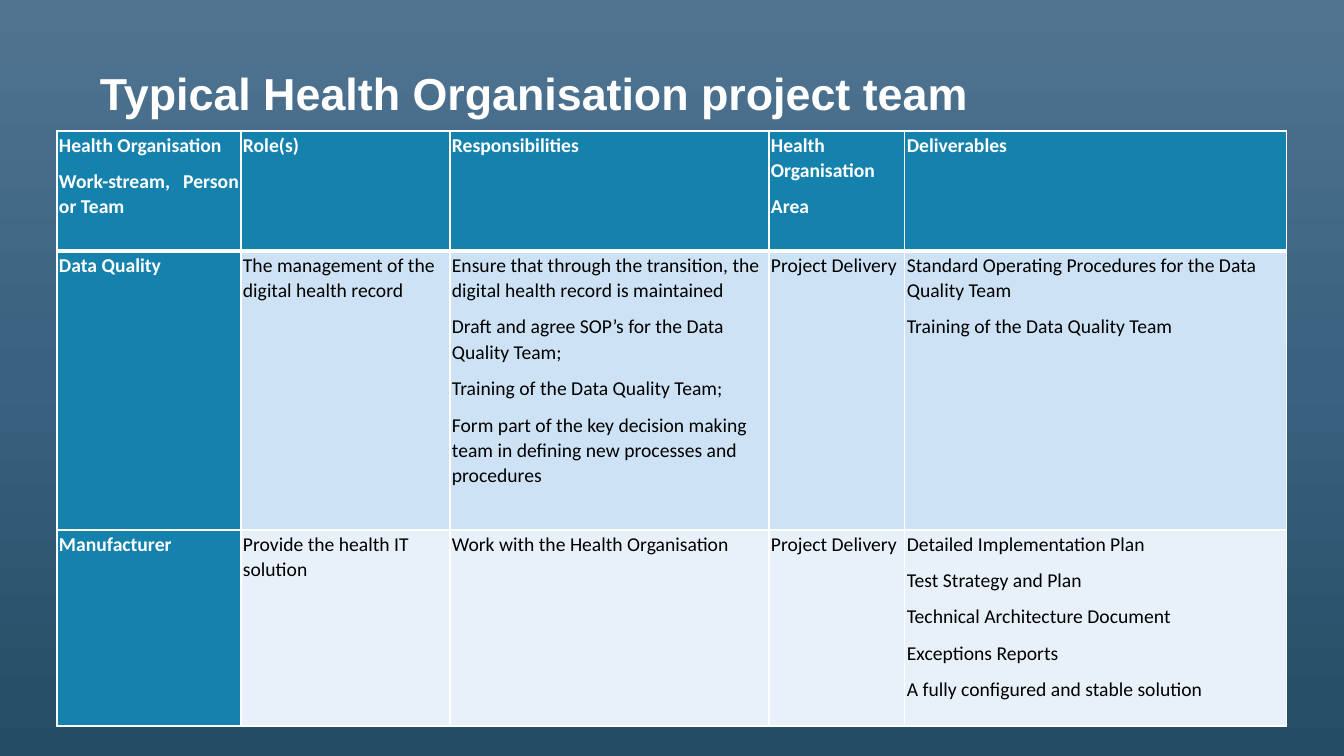
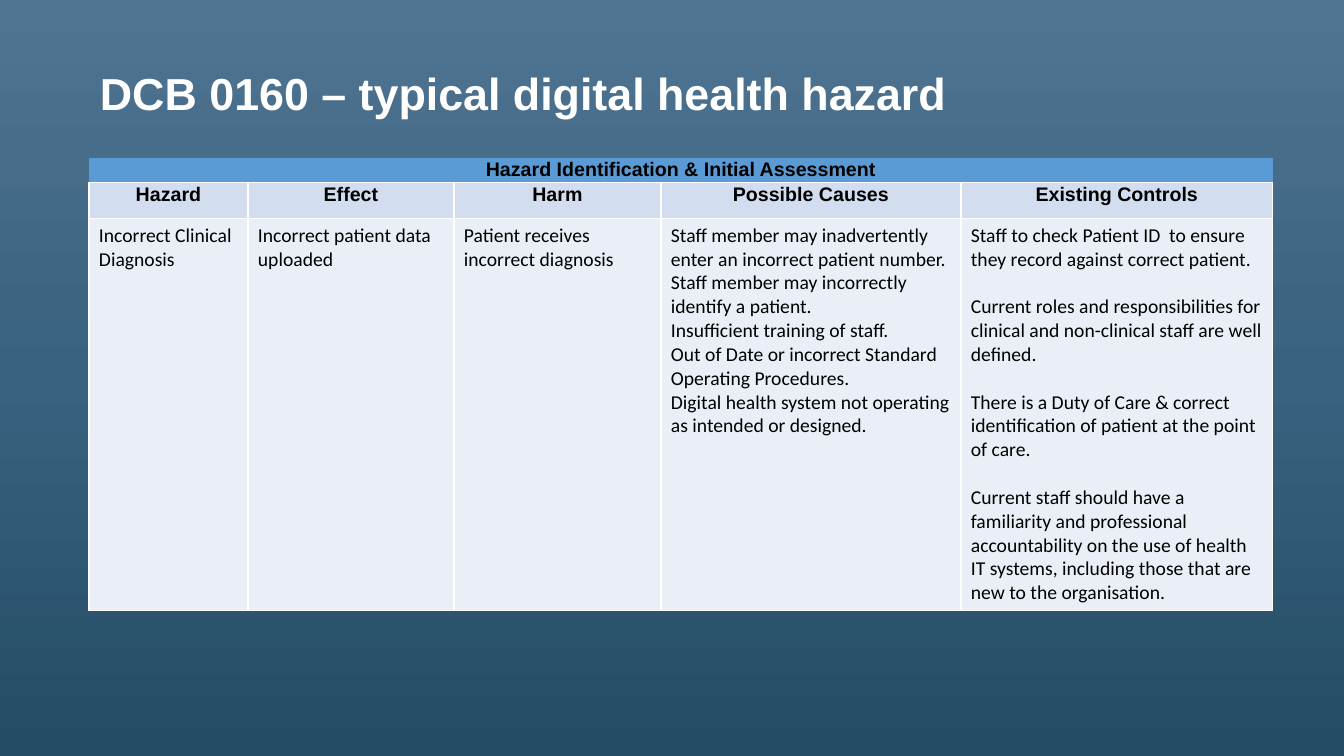
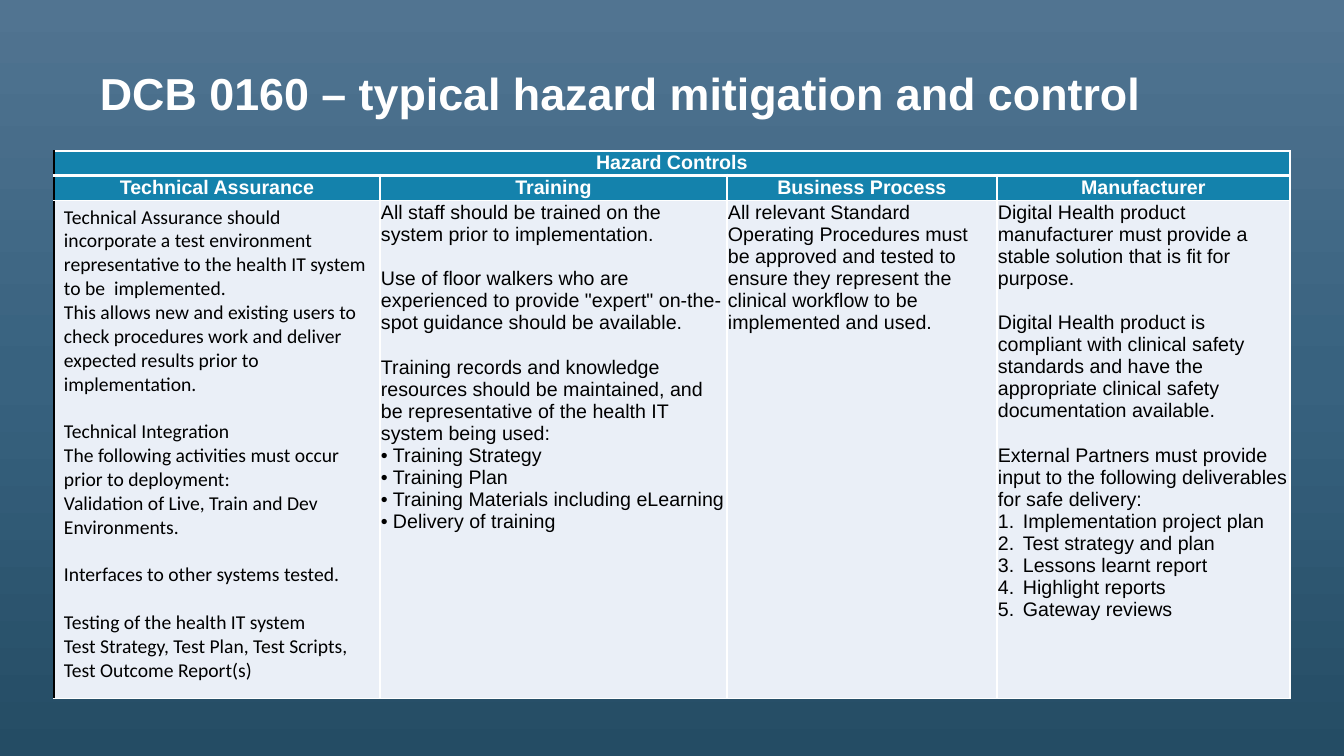
"""Build three slides on health project roles and clinical hazards."""
from copy import deepcopy
from dataclasses import dataclass, field
from typing import NamedTuple

from lxml import etree
from pptx import Presentation
from pptx.dml.color import RGBColor
from pptx.enum.text import MSO_ANCHOR, PP_ALIGN
from pptx.oxml.ns import qn
from pptx.util import Emu, Pt

LEFT, MID, FULL = PP_ALIGN.LEFT, PP_ALIGN.CENTER, PP_ALIGN.JUSTIFY
MIDDLE = MSO_ANCHOR.MIDDLE
PX = 914400 / 100.8
WIDE, HIGH = 1344, 756

WHITE = RGBColor(0xFF, 0xFF, 0xFF)
BLACK = RGBColor(0x00, 0x00, 0x00)
TEAL = RGBColor(0x14, 0x82, 0xAC)
SKY = RGBColor(0xCD, 0xE3, 0xF5)
ICE = RGBColor(0xE8, 0xF1, 0xFA)
BLUE = RGBColor(0x5B, 0x9B, 0xD5)
MIST = RGBColor(0xD2, 0xDE, 0xEF)
PALE = RGBColor(0xEA, 0xEF, 0xF7)
FADE = (
    (0.0, RGBColor(0x51, 0x74, 0x91)),
    (0.5, RGBColor(0x38, 0x62, 0x7F)),
    (1.0, RGBColor(0x24, 0x4C, 0x64)),
)

ROOMY, SNUG, TIGHT, SLIM = (10, 5, 10, 5), (2, 1, 2, 0), (1, 1, 1, 0), (1, 1, 12, 0)
SIDES = ("left", "top", "right", "bottom")
MARKS = {
    "dot": (12, "buChar", {"char": "•"}),
    "num": (25, "buAutoNum", {"type": "arabicPeriod"}),
}


class Para(NamedTuple):
    """A paragraph with a gap above it in points and a list mark."""
    text: str
    gap: int = 0
    mark: str = ""


class Look(NamedTuple):
    """The format of a cell."""
    fill: RGBColor
    ink: RGBColor = BLACK
    font: str = "Calibri"
    bold: bool = False
    inset: tuple[int, int, int, int] = ROOMY
    align: PP_ALIGN = LEFT
    line: float = 1.0
    after: int = 0


Text = str | tuple[str | Para, ...]


@dataclass(frozen=True)
class Row:
    """A table row with looks for special columns and rule widths in points."""
    high: int
    look: Look
    cells: tuple[Text, ...]
    looks: dict[int, Look] = field(default_factory=dict)
    top: int = 1
    side: int = 1
    base: int = 1


@dataclass(frozen=True)
class Page:
    """A title with a table."""
    title: str
    left: int
    top: int
    cols: tuple[int, ...]
    rows: tuple[Row, ...]
    edge: RGBColor = WHITE


TEAM_SIDE = Look(TEAL, WHITE, bold=True, inset=SNUG, line=1.06, after=8)
TEAM_HEAD = TEAM_SIDE._replace(align=FULL)
TEAM_SKY = Look(SKY, inset=SNUG, line=1.06, after=8)
TEAM_ICE = TEAM_SKY._replace(fill=ICE)
BAND = Look(BLUE, BLACK, "Arial", True, TIGHT, MID)
LABEL = BAND._replace(fill=MIST)
CARE_HEAD = BAND._replace(fill=TEAL, ink=WHITE)
BODY = Look(PALE)
CARE_BODY = BODY._replace(font="Arial", inset=TIGHT)
CARE_SLIM = CARE_BODY._replace(inset=SLIM)

PAGES = (
    Page("Typical Health Organisation project team", 57, 131, (184, 209, 319, 136, 382), (
        Row(120, TEAM_HEAD, (
            ("Health Organisation", "Work-stream, Person or Team"),
            "Role(s)",
            "Responsibilities",
            ("Health Organisation", "Area"),
            "Deliverables",
        ), base=3),
        Row(279, TEAM_SKY, (
            "Data Quality",
            "The management of the digital health record",
            (
                "Ensure that through the transition, the digital health record is maintained",
                "Draft and agree SOP’s for the Data Quality Team;",
                "Training of the Data Quality Team;",
                "Form part of the key decision making team in defining new processes and procedures",
            ),
            "Project Delivery",
            (
                "Standard Operating Procedures for the Data Quality Team",
                "Training of the Data Quality Team",
            ),
        ), {0: TEAM_SIDE}, top=3),
        Row(196, TEAM_ICE, (
            "Manufacturer",
            "Provide the health IT solution",
            "Work with the Health Organisation",
            "Project Delivery",
            (
                "Detailed Implementation Plan",
                "Test Strategy and Plan",
                "Technical Architecture Document",
                "Exceptions Reports",
                "A fully configured and stable solution",
            ),
        ), {0: TEAM_SIDE}),
    )),
    Page("DCB 0160 – typical digital health hazard", 89, 158, (159, 206, 207, 300, 312), (
        Row(24, BAND, ("Hazard Identification & Initial Assessment",), top=0, side=0),
        Row(36, LABEL, ("Hazard", "Effect", "Harm", "Possible Causes", "Existing Controls")),
        Row(392, BODY, (
            "Incorrect Clinical Diagnosis",
            "Incorrect patient data uploaded",
            "Patient receives incorrect diagnosis",
            (
                "Staff member may inadvertently enter an incorrect patient number.",
                "Staff member may incorrectly identify a patient.",
                "Insufficient training of staff.",
                "Out of Date or incorrect Standard Operating Procedures.",
                "Digital health system not operating as intended or designed.",
            ),
            (
                "Staff to check Patient ID  to ensure they record against correct patient.",
                Para("Current roles and responsibilities for clinical and non-clinical staff "
                     "are well defined.", 17),
                Para("There is a Duty of Care & correct identification of patient at the "
                     "point of care.", 17),
                Para("Current staff should have a familiarity and professional accountability "
                     "on the use of health IT systems, including those that are new to the "
                     "organisation.", 17),
            ),
        )),
    )),
    Page("DCB 0160 – typical hazard mitigation and control", 54, 151, (326, 347, 270, 293), (
        Row(24, CARE_HEAD, ("Hazard Controls",), base=3),
        Row(25, CARE_HEAD, (
            "Technical Assurance", "Training", "Business Process", "Manufacturer",
        ), top=3),
        Row(498, CARE_BODY, (
            (
                "Technical Assurance should incorporate a test environment representative "
                "to the health IT system to be  implemented.",
                "This allows new and existing users to check procedures work and deliver "
                "expected results prior to implementation.",
                Para("Technical Integration", 17),
                "The following activities must occur prior to deployment:",
                "Validation of Live, Train and Dev Environments.",
                Para("Interfaces to other systems tested.", 17),
                Para("Testing of the health IT system", 17),
                "Test Strategy, Test Plan, Test Scripts, Test Outcome Report(s)",
            ),
            (
                "All staff should be trained on the system prior to implementation.",
                Para("Use of floor walkers who are experienced to provide \"expert\" "
                     "on-the-spot guidance should be available.", 16),
                Para("Training records and knowledge resources should be maintained, and be "
                     "representative of the health IT system being used:", 16),
                Para("Training Strategy", mark="dot"),
                Para("Training Plan", mark="dot"),
                Para("Training Materials including eLearning", mark="dot"),
                Para("Delivery of training", mark="dot"),
            ),
            "All relevant Standard Operating Procedures must be approved and tested to "
            "ensure they represent the clinical workflow to be implemented and used.",
            (
                "Digital Health product manufacturer must provide a stable solution that "
                "is fit for purpose.",
                Para("Digital Health product is compliant with clinical safety standards and "
                     "have the appropriate clinical safety documentation available.", 16),
                Para("External Partners must provide input to the following deliverables "
                     "for safe delivery:", 16),
                Para("Implementation project plan", mark="num"),
                Para("Test strategy and plan", mark="num"),
                Para("Lessons learnt report", mark="num"),
                Para("Highlight reports", mark="num"),
                Para("Gateway reviews", mark="num"),
            ),
        ), {0: BODY, 2: CARE_SLIM}),
    ), BLACK),
)


def px(size: int) -> Emu:
    """Turn pixels into EMU."""
    return Emu(round(size * PX))


def apply(item, values: dict) -> None:
    """Set each named attribute."""
    for name, value in values.items():
        setattr(item, name, value)


def write(para, text: str, size: int, look: Look, gap: int = 0) -> None:
    """Fill a paragraph with one run in the given look."""
    apply(para, {
        "alignment": look.align, "line_spacing": look.line,
        "space_before": Pt(gap), "space_after": Pt(look.after),
    })
    run = para.add_run()
    run.text = text
    apply(run.font, {"name": look.font, "size": Pt(size), "bold": look.bold})
    run.font.color.rgb = look.ink


def mark_list(para, mark: str) -> None:
    """Give a paragraph a hanging list mark."""
    hang, tag, values = MARKS[mark]
    props = para._p.get_or_add_pPr()
    props.set("marL", str(px(hang)))
    props.set("indent", str(-px(hang)))
    etree.SubElement(props, qn("a:buFont"), typeface="Arial")
    etree.SubElement(props, qn(f"a:{tag}"), **values)


def rule(cell, edges: dict[str, tuple[int, RGBColor]]) -> None:
    """Draw the sides of a cell, with none where the width is zero."""
    props = cell._tc.get_or_add_tcPr()
    for spot, (side, (width, color)) in enumerate(edges.items()):
        line = etree.Element(qn(f"a:ln{side}"), w=str(Pt(width)))
        if width:
            fill = etree.SubElement(line, qn("a:solidFill"))
            etree.SubElement(fill, qn("a:srgbClr"), val=str(color))
        else:
            etree.SubElement(line, qn("a:noFill"))
        props.insert(spot, line)


def fill_cell(cell, look: Look, text: Text) -> None:
    """Colour a cell and write its paragraphs."""
    cell.fill.solid()
    cell.fill.fore_color.rgb = look.fill
    apply(cell, {f"margin_{side}": px(gap) for side, gap in zip(SIDES, look.inset)})
    frame = cell.text_frame
    for i, part in enumerate((text,) if isinstance(text, str) else text):
        item = Para(part) if isinstance(part, str) else part
        para = frame.add_paragraph() if i else frame.paragraphs[0]
        write(para, item.text, 14, look, item.gap)
        if item.mark:
            mark_list(para, item.mark)


def add_title(slide, text: str) -> None:
    """Add the slide title."""
    frame = slide.shapes.add_textbox(px(90), px(64), px(1183), px(64)).text_frame
    apply(frame, {"word_wrap": True, "vertical_anchor": MIDDLE})
    write(frame.paragraphs[0], text, 32, Look(TEAL, WHITE, "Arial", True, line=0.9))


def add_grid(slide, page: Page) -> None:
    """Add the table of a page."""
    count = len(page.cols)
    table = slide.shapes.add_table(
        len(page.rows), count, px(page.left), px(page.top),
        px(sum(page.cols)), px(sum(row.high for row in page.rows)),
    ).table
    apply(table, {"first_row": False, "horz_banding": False})
    for col, wide in zip(table.columns, page.cols):
        col.width = px(wide)
    for r, row in enumerate(page.rows):
        table.rows[r].height = px(row.high)
        for c in range(count):
            cell = table.cell(r, c)
            if c < len(row.cells):
                fill_cell(cell, row.looks.get(c, row.look), row.cells[c])
            rule(cell, {
                "L": (row.side, WHITE if c else page.edge),
                "R": (row.side, WHITE),
                "T": (row.top, WHITE),
                "B": (row.base, WHITE),
            })
        if len(row.cells) == 1:
            table.cell(r, 0).merge(table.cell(r, count - 1))


def paint(master) -> None:
    """Give the master its three-stop gradient."""
    fill = master.background.fill
    fill.gradient()
    fill.gradient_angle = 270
    stops = next(master.element.iter(qn("a:gsLst")))
    stops.append(deepcopy(stops[0]))
    for stop, (spot, color) in zip(fill.gradient_stops, FADE):
        stop.position = spot
        stop.color.rgb = color


def main() -> None:
    """Build and save the deck."""
    deck = Presentation()
    apply(deck, {"slide_width": px(WIDE), "slide_height": px(HIGH)})
    paint(deck.slide_master)
    for page in PAGES:
        slide = deck.slides.add_slide(deck.slide_layouts[6])
        add_title(slide, page.title)
        add_grid(slide, page)
    deck.save("out.pptx")


if __name__ == "__main__":
    main()
